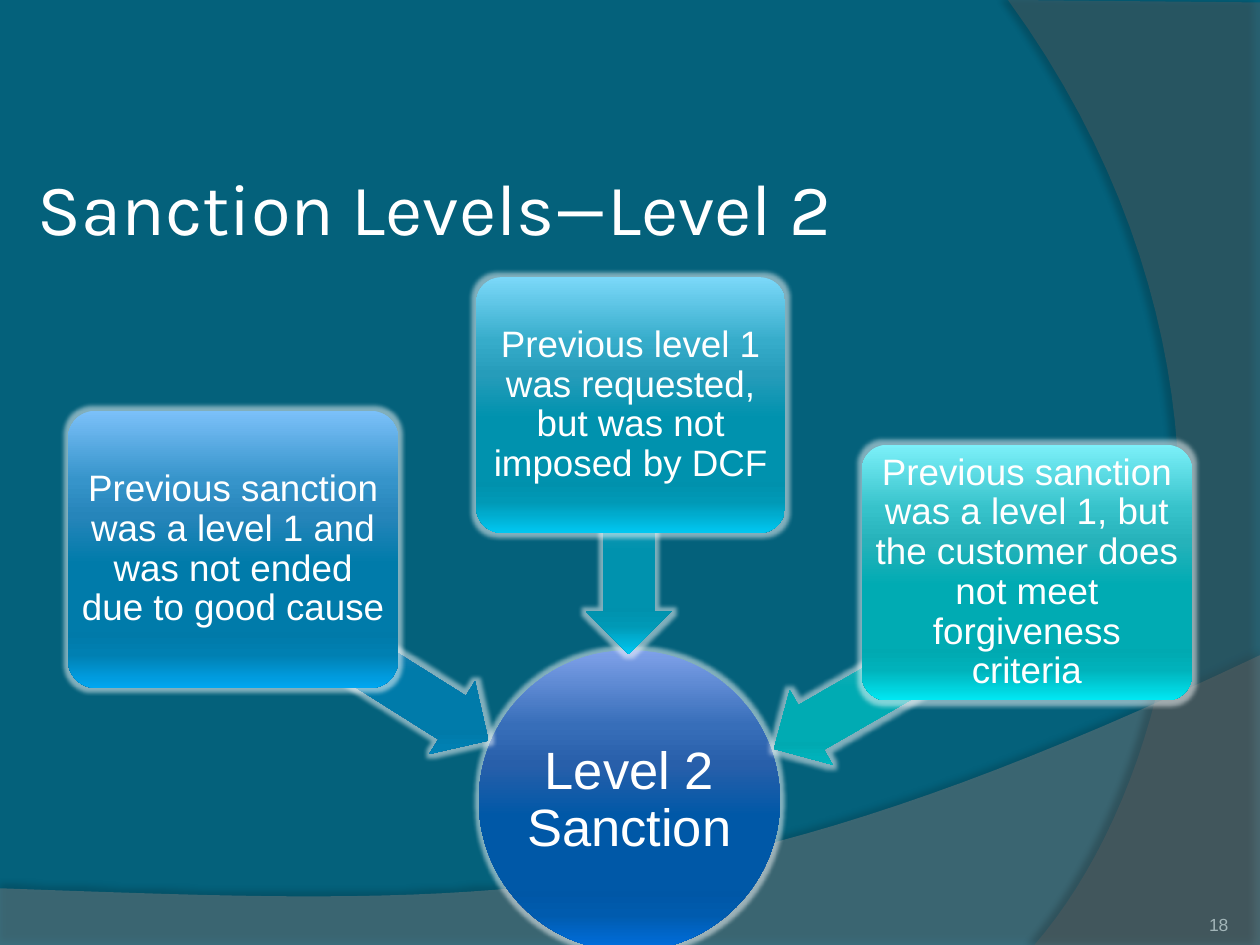
"""Build the slide on level 2 sanctions."""
from pptx import Presentation
from pptx.dml.color import RGBColor
from pptx.enum.shapes import MSO_SHAPE
from pptx.enum.text import MSO_ANCHOR, MSO_AUTO_SIZE, PP_ALIGN
from pptx.oxml import parse_xml
from pptx.oxml.ns import nsdecls, qn
from pptx.util import Pt

PX = 9144
LEFT, MID, RIGHT = PP_ALIGN.LEFT, PP_ALIGN.CENTER, PP_ALIGN.RIGHT
CENTER, BOTTOM = MSO_ANCHOR.MIDDLE, MSO_ANCHOR.BOTTOM
FIXED = MSO_AUTO_SIZE.NONE
DISC, BOX, ARROW = MSO_SHAPE.OVAL, MSO_SHAPE.ROUNDED_RECTANGLE, MSO_SHAPE.LEFT_ARROW
NS = nsdecls("a")


def rgb(code):
    return RGBColor.from_string(code)


def write(shape, text, size, font="Arial", color="FFFFFF", align=MID,
          anchor=CENTER, inset=4, lead=0.9):
    frame = shape.text_frame
    frame.word_wrap = True
    frame.auto_size = FIXED
    frame.vertical_anchor = anchor
    frame.margin_left = frame.margin_right = inset * PX
    frame.margin_top = frame.margin_bottom = inset * PX
    para = frame.paragraphs[0]
    para.alignment = align
    para.line_spacing = lead
    run = para.add_run()
    run.text = text
    run.font.size = Pt(size)
    run.font.name = font
    run.font.color.rgb = rgb(color)


deck = Presentation()
deck.slide_width, deck.slide_height = 1000 * PX, 750 * PX
slide = deck.slides.add_slide(deck.slide_layouts[5])
shapes = slide.shapes
slide.background.fill.solid()
slide.background.fill.fore_color.rgb = rgb("04617B")

# corners, curve controls, colour, opacity, shadow opacity, distance, angle
bands = [
    ([(0, 705), (0, 751), (1000, 751), (1000, 520)],
     [(559, 729), (391, 719), (0, 705)], "7F7F7F", 45, 35, 3.5, 270),
    ([(1000, 2), (1000, 750), (821, 750)],
     [(935, 619), (1018, 300), (800, 0)], "5E5E5E", 40, 45, 4, 180),
]
for corners, curve, color, alpha, dark, dist, angle in bands:
    ctrl = [corners[-1]] + curve
    points = list(corners)
    for step in range(1, 41):
        t = step / 40
        parts = ((1 - t) ** 3, 3 * t * (1 - t) ** 2, 3 * t * t * (1 - t), t ** 3)
        points.append([sum(w * p[axis] for w, p in zip(parts, ctrl)) for axis in (0, 1)])
    points = [(round(x * PX), round(y * PX)) for x, y in points]
    pen = shapes.build_freeform(*points[0], scale=1.0)
    pen.add_line_segments(points[1:], close=True)
    band = pen.convert_to_shape()
    band.shadow.inherit = False
    band.line.fill.background()
    band.fill.solid()
    band.fill.fore_color.rgb = rgb(color)
    props = band._element.spPr
    props.find(qn("a:solidFill"))[0].append(
        parse_xml(f'<a:alpha {NS} val="{alpha * 1000}"/>'))
    props.find(qn("a:effectLst")).append(parse_xml(
        f'<a:outerShdw {NS} blurRad="{Pt(4)}" dist="{Pt(dist)}" dir="{angle * 60000}" '
        f'algn="ctr" rotWithShape="0"><a:srgbClr val="000000">'
        f'<a:alpha val="{dark * 1000}"/></a:srgbClr></a:outerShdw>'))

title = shapes.title
title.left, title.top, title.width, title.height = [n * PX for n in (25, 125, 925, 78)]
write(title, "Sanction Levels—Level 2", 41.4, font="Karla", align=LEFT, inset=5, lead=1)
shapes._spTree.append(title._element)

stops = (0, 25, 38, 55, 80, 88, 100)
navy = "7FA1E9 376EB9 285FAA 0058A7 0057A6 005BAE 0070E2"
blue = "7BC0F9 3694CA 2685BA 007BAA 007AA9 0080B2 00A7F1"
cyan = "7BD8F9 36ACCA 269CBA 0092AE 0091AD 0099B6 00C8F2"
teal = "7CF0F9 36C2CA 26B2BA 00ABB3 00A9B1 00B2BB 00E8F3"

nodes = [
    (DISC, (380, 516, 239, 239), 0, navy, "Level 2 Sanction", 30),
    (ARROW, (167, 490, 239, 68), 212.2, blue, "", 0),
    (BOX, (54, 326, 262, 220), 0, blue,
     "Previous sanction was a level 1 and was not ended due to good cause", 21),
    (ARROW, (407, 393, 184, 68), 270, cyan, "", 0),
    (BOX, (378, 220, 245, 203), 0, cyan,
     "Previous level 1 was requested, but was not imposed by DCF", 21),
    (ARROW, (599, 503, 230, 68), 330.1, teal, "", 0),
    (BOX, (684, 353, 262, 203), 0, teal,
     "Previous sanction was a level 1, but the customer does not meet forgiveness criteria", 21),
]
adjust = {DISC: (), BOX: (0.1,), ARROW: (0.6, 0.5)}
for kind, box, turn, tones, text, size in nodes:
    node = shapes.add_shape(kind, *[n * PX for n in box])
    node.rotation = turn
    for spot, value in enumerate(adjust[kind]):
        node.adjustments[spot] = value
    node.shadow.inherit = False
    node.line.fill.background()
    node.fill.gradient()
    node.fill.gradient_angle = 270
    props = node._element.spPr
    grad = props.find(qn("a:gradFill"))
    grad.set("rotWithShape", "0")
    ramp = grad.find(qn("a:gsLst"))
    ramp.clear()
    for stop, tone in zip(stops, tones.split()):
        ramp.append(parse_xml(
            f'<a:gs {NS} pos="{stop * 1000}"><a:srgbClr val="{tone}"/></a:gs>'))
    props.find(qn("a:effectLst")).append(parse_xml(
        f'<a:glow {NS} rad="{Pt(5)}"><a:srgbClr val="FFFFFF">'
        f'<a:alpha val="50000"/></a:srgbClr></a:glow>'))
    if text:
        write(node, text, size, inset=2 if kind == DISC else 4)

number = shapes.add_textbox(*[n * PX for n in (892, 702, 83, 40)])
write(number, "18", 10, color="A2B5B8", align=RIGHT, anchor=BOTTOM, inset=0, lead=1)

deck.save("out.pptx")
